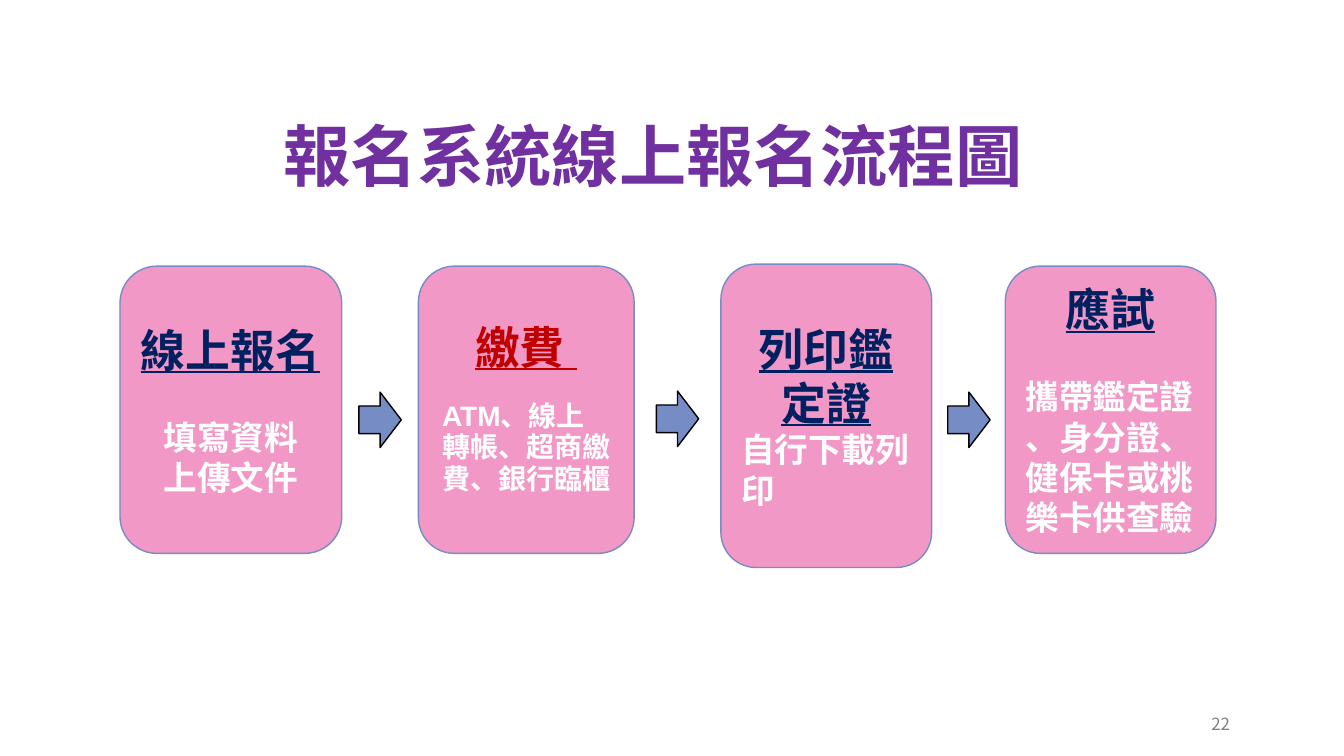
from dataclasses import dataclass

from lxml.etree import SubElement
from pptx import Presentation
from pptx.dml.color import RGBColor
from pptx.enum.shapes import MSO_SHAPE
from pptx.enum.text import MSO_ANCHOR, PP_ALIGN
from pptx.oxml.ns import qn
from pptx.util import Inches, Pt

COLORS = {
    "pink": "F298C7", "blue": "768CC5", "navy": "002060", "red": "C00000",
    "purple": "7030A0", "gray": "808080", "white": "FFFFFF", "black": "000000",
}
SANS = "Noto Sans CJK TC"
LEFT, CENTER, RIGHT = PP_ALIGN.LEFT, PP_ALIGN.CENTER, PP_ALIGN.RIGHT


@dataclass
class Line:
    text: str
    size: float
    color: str = "white"
    font: str = "Quicksand"
    bold: bool = True
    under: bool = False
    align: PP_ALIGN = LEFT
    before: float = 0
    space: float = 1.0


@dataclass
class Step:
    left: float
    top: float
    width: float
    height: float
    lines: list[Line]
    inset: tuple[float, float] = (0.1, 0.05)


def head(text: str, color: str = "navy", font: str = "Arial", **style) -> Line:
    """Describe the underlined heading of a step."""
    return Line(text, 32, color, font, under=True, **{"align": CENTER, **style})


STEPS = [
    Step(1.19, 2.64, 2.2, 2.85, [
        head("線上報名", font="Quicksand", align=LEFT),
        Line("填寫資料", 24, align=CENTER, before=28.8),
        Line("上傳文件", 24, align=CENTER),
    ]),
    Step(4.15, 2.64, 2.14, 2.85, [
        head("繳費 ", "red", space=0.95),
        Line("ATM、線上轉帳、超商繳費、銀行臨櫃", 20, font="Arial", before=18.7, space=0.95),
    ], (0.13, 0.07)),
    Step(7.15, 2.62, 2.09, 3.01, [
        head("列印鑑定證"),
        Line("自行下載列印", 24),
    ]),
    Step(9.97, 2.64, 2.09, 2.85, [
        head("應試"),
        Line("攜帶鑑定證", 24, before=28.8),
        Line("、身分證、健保卡或桃樂卡供查驗", 24),
    ]),
]
ARROWS = [(3.56, 3.89), (6.51, 3.88), (9.4, 3.89)]


def tint(name: str) -> RGBColor:
    """Look up a colour by name."""
    return RGBColor.from_string(COLORS[name])


def write(shape, lines: list[Line], *, anchor=MSO_ANCHOR.MIDDLE,
          inset: tuple[float, float] = (0.13, 0.07)) -> None:
    """Fill a shape with formatted paragraphs."""
    frame = shape.text_frame
    frame.word_wrap = True
    frame.vertical_anchor = anchor
    frame.margin_left = frame.margin_right = Inches(inset[0])
    frame.margin_top = frame.margin_bottom = Inches(inset[1])
    for index, line in enumerate(lines):
        para = frame.add_paragraph() if index else frame.paragraphs[0]
        para.alignment = line.align
        para.line_spacing = line.space
        para.space_before = Pt(line.before)
        run = para.add_run()
        run.text = line.text
        font = run.font
        font.size, font.name = Pt(line.size), line.font
        font.bold, font.underline = line.bold, line.under
        font.color.rgb = tint(line.color)
        SubElement(font._element, qn("a:ea")).set("typeface", line.font)


def block(slide, kind: MSO_SHAPE, left: float, top: float, width: float,
          height: float, fill: str, edge: str):
    """Draw a filled and outlined preset shape."""
    shape = slide.shapes.add_shape(
        kind, Inches(left), Inches(top), Inches(width), Inches(height))
    shape.shadow.inherit = False
    shape.fill.solid()
    shape.fill.fore_color.rgb = tint(fill)
    shape.line.color.rgb = tint(edge)
    shape.line.width = Pt(1)
    return shape


def label(slide, left: float, top: float, width: float, height: float, line: Line) -> None:
    """Add a text box whose text sits at the bottom."""
    box = slide.shapes.add_textbox(Inches(left), Inches(top), Inches(width), Inches(height))
    write(box, [line], anchor=MSO_ANCHOR.BOTTOM)


def main() -> None:
    """Build the flow chart slide and save it."""
    deck = Presentation()
    deck.slide_width, deck.slide_height = Inches(13.33), Inches(7.5)
    slide = deck.slides.add_slide(deck.slide_layouts[6])
    label(slide, 0.92, 0.76, 11.11, 1.25,
          Line("報名系統線上報名流程圖", 48, "purple", SANS, align=CENTER, space=0.85))
    label(slide, 11.12, 7, 1.21, 0.35,
          Line("22", 12, "gray", SANS, bold=False, align=RIGHT))
    for step in STEPS:
        card = block(slide, MSO_SHAPE.ROUNDED_RECTANGLE, step.left, step.top,
                     step.width, step.height, "pink", "blue")
        write(card, step.lines, inset=step.inset)
    for left, top in ARROWS:
        block(slide, MSO_SHAPE.RIGHT_ARROW, left, top, 0.42, 0.55, "blue", "black")
    deck.save("out.pptx")


if __name__ == "__main__":
    main()
